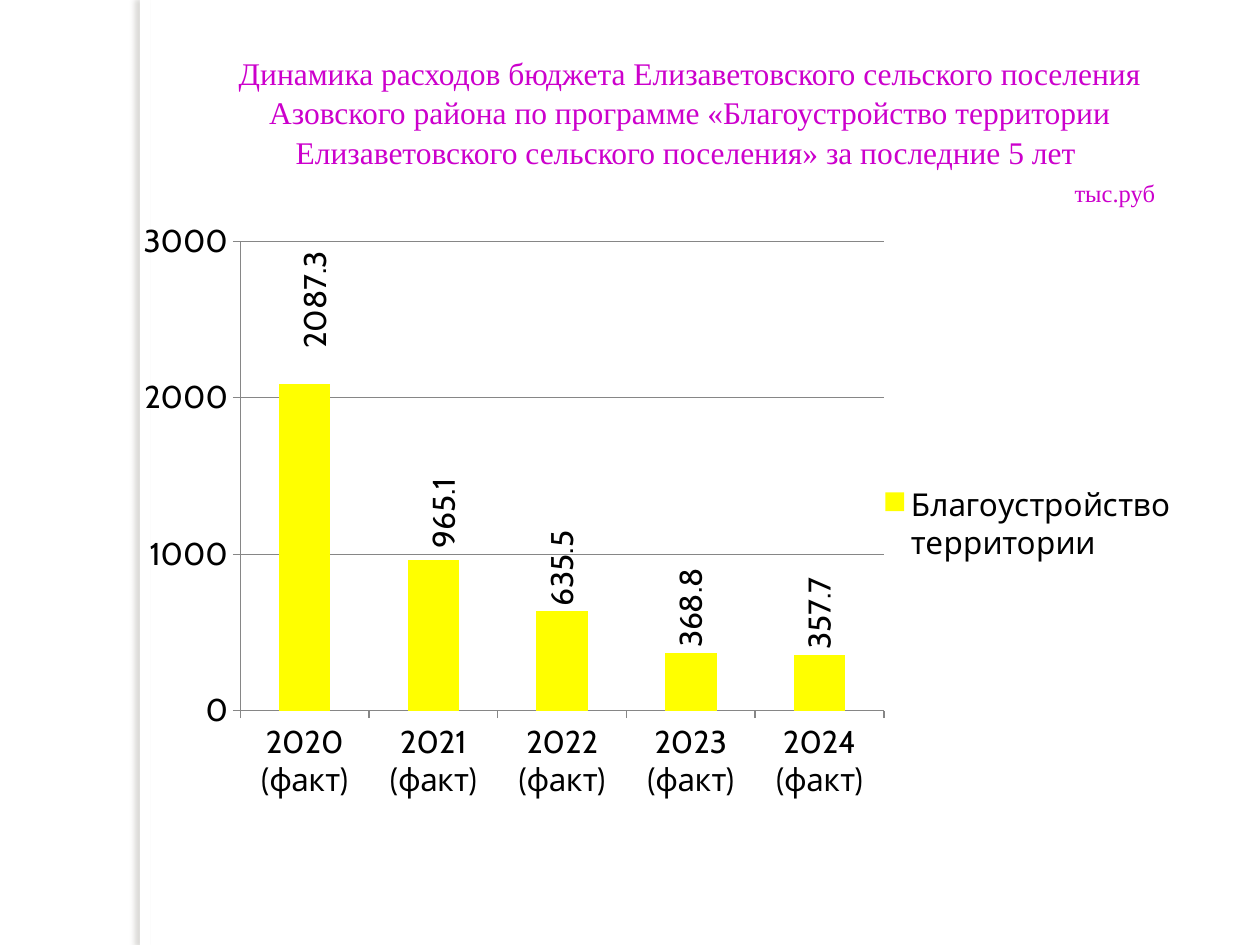
from lxml.etree import SubElement
from pptx import Presentation
from pptx.chart.data import CategoryChartData
from pptx.dml.color import RGBColor
from pptx.enum.chart import (XL_CHART_TYPE, XL_LABEL_POSITION, XL_LEGEND_POSITION,
                             XL_TICK_LABEL_POSITION, XL_TICK_MARK)
from pptx.enum.shapes import MSO_SHAPE
from pptx.enum.text import PP_ALIGN
from pptx.oxml import parse_xml
from pptx.oxml.ns import nsdecls, qn
from pptx.util import Pt

WHITE = RGBColor(0xFF, 0xFF, 0xFF)
BLACK = RGBColor(0, 0, 0)
PURPLE = RGBColor(0xCC, 0, 0xCC)
YELLOW = RGBColor(0xFF, 0xFF, 0)
GREY = RGBColor(0x86, 0x86, 0x86)

TITLE = ("Динамика расходов бюджета Елизаветовского сельского поселения "
         "Азовского района по программе «Благоустройство территории "
         "Елизаветовского сельского поселения» за последние 5 лет ")
COSTS = {2020: 2087.3, 2021: 965.1, 2022: 635.5, 2023: 368.8, 2024: 357.7}
NUDGES = {0: (0.01, -0.05), 1: (0.01, -0.01)}  # label shifts, share of chart size


def set_font(font, size, name, color):
    font.size, font.name = Pt(size), name
    font.color.rgb = color


def write(frame, text, size=18, font="Times New Roman", color=PURPLE,
          align=PP_ALIGN.CENTER, spacing=1.0):
    frame.word_wrap = True
    para = frame.paragraphs[0]
    para.alignment, para.line_spacing = align, spacing
    run = para.add_run()
    run.text = text
    set_font(run.font, size, font, color)


def make_layout(x, y, w=None, h=None):
    """Return a manual chart layout; with a size it places the inner plot area."""
    parts = [("x", x), ("y", y)]
    if w:
        parts = ([("layoutTarget", "inner"), ("xMode", "edge"), ("yMode", "edge")]
                 + parts + [("w", w), ("h", h)])
    body = "".join(f'<c:{tag} val="{val}"/>' for tag, val in parts)
    return parse_xml(f'<c:layout {nsdecls("c")}><c:manualLayout>{body}'
                     '</c:manualLayout></c:layout>')


class Page:
    def __init__(self, slide, font="Cabin", size=18):
        self.slide, self.font, self.size = slide, font, size

    def text(self, box, text, **form):
        shape = self.slide.shapes.add_textbox(*map(Pt, box))
        write(shape.text_frame, text, **form)

    def strip(self, box):
        """Add a white bar that casts a soft shadow to its left."""
        shape = self.slide.shapes.add_shape(MSO_SHAPE.RECTANGLE, *map(Pt, box))
        shape.fill.solid()
        shape.fill.fore_color.rgb = WHITE
        shape.line.fill.background()
        shape.shadow.inherit = False
        effects = shape._element.spPr.find(qn("a:effectLst"))
        shade = SubElement(effects, qn("a:outerShdw"), blurRad=str(Pt(3)),
                           dist=str(Pt(3)), dir="10800000", algn="tl", rotWithShape="0")
        color = SubElement(shade, qn("a:srgbClr"), val="736F63")
        SubElement(color, qn("a:alpha"), val="25000")

    def columns(self, box, name, costs):
        data = CategoryChartData()
        data.categories = [f"{year} (факт)" for year in costs]
        data.add_series(name, costs.values())
        chart = self.slide.shapes.add_chart(
            XL_CHART_TYPE.COLUMN_CLUSTERED, *map(Pt, box), data).chart
        set_font(chart.font, self.size, self.font, BLACK)
        chart.has_title = False
        chart.has_legend = True
        chart.legend.position = XL_LEGEND_POSITION.RIGHT
        chart.legend.include_in_layout = False

        for axis in (chart.category_axis, chart.value_axis):
            axis.major_tick_mark = XL_TICK_MARK.OUTSIDE
            axis.format.line.color.rgb = GREY
            axis.format.line.width = Pt(0.75)
        chart.category_axis.tick_label_position = XL_TICK_LABEL_POSITION.LOW
        scale = chart.value_axis
        scale.minimum_scale, scale.maximum_scale, scale.major_unit = 0, 3000, 1000
        scale.has_major_gridlines = True
        scale.major_gridlines.format.line.color.rgb = GREY
        scale.major_gridlines.format.line.width = Pt(0.75)

        plot = chart.plots[0]
        plot.gap_width, plot.vary_by_categories = 150, False
        bars = plot.series[0]
        bars.format.fill.solid()
        bars.format.fill.fore_color.rgb = YELLOW
        self.labels(chart, bars)

        area = chart._chartSpace.chart.plotArea
        for old in area.findall(qn("c:layout")):
            area.remove(old)
        area.insert(0, make_layout(0.088, 0.036, 0.617, 0.77))

    def labels(self, chart, bars):
        """Show upright values above the bars, some shifted by hand."""
        marks = [bars.data_labels] + [bars.points[i].data_label for i in NUDGES]
        bars.data_labels.show_value = True
        for mark in marks:
            set_font(mark.font, self.size, self.font, BLACK)
            mark.position = XL_LABEL_POSITION.OUTSIDE_END
        root = chart._chartSpace
        for body in root.xpath(".//c:dLbls//a:bodyPr"):
            body.set("rot", "-5400000")
            body.set("vert", "horz")
        for label, shift in zip(root.xpath(".//c:dLbl"), NUDGES.values()):
            label.insert(1, make_layout(*shift))


def main():
    deck = Presentation()
    deck.slide_width, deck.slide_height = Pt(720), Pt(540)
    page = Page(deck.slides.add_slide(deck.slide_layouts[6]))
    page.strip((80, 0, 5.8, 540))
    page.text((93.6, 26, 601.2, 74), TITLE, spacing=1.05)
    page.text((560, 98, 107.2, 24), "тыс.руб", size=14, align=PP_ALIGN.RIGHT)
    page.columns((82, 125.3, 599, 348.5), "Благоустройство территории", COSTS)
    deck.save("out.pptx")


if __name__ == "__main__":
    main()
